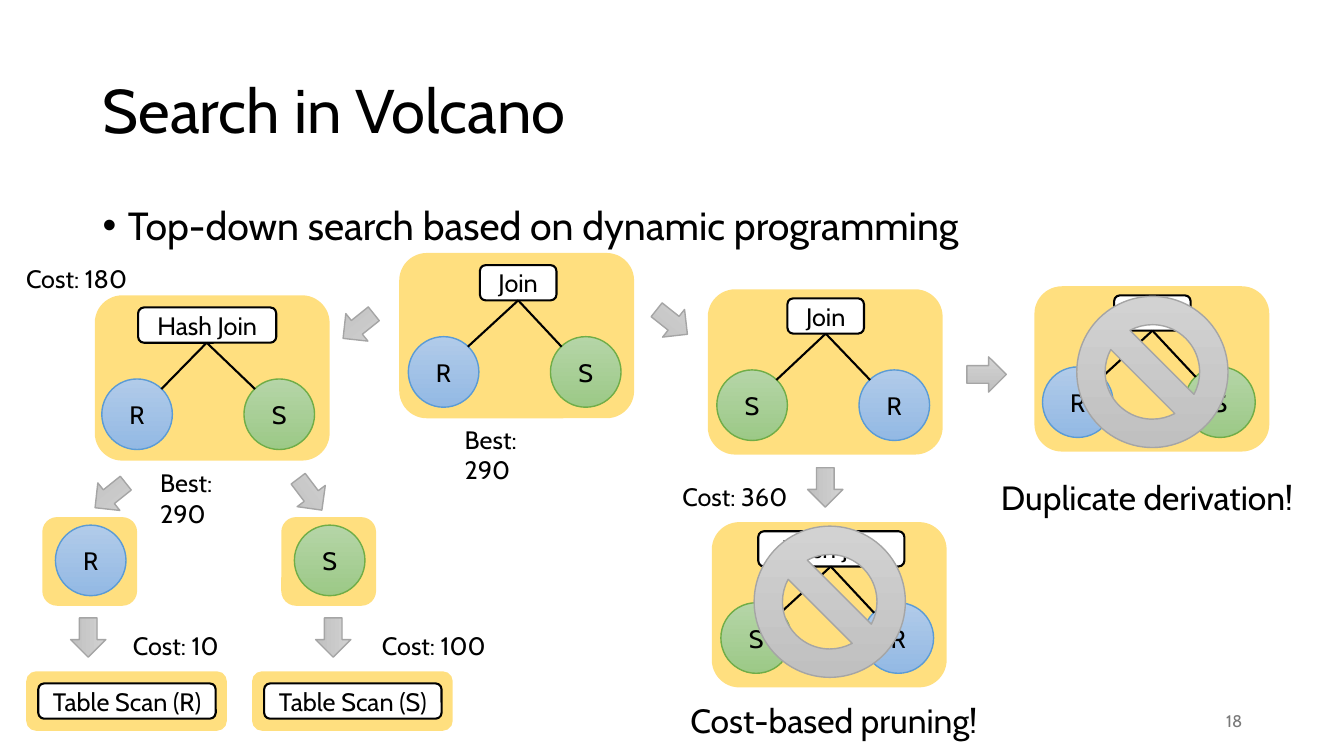
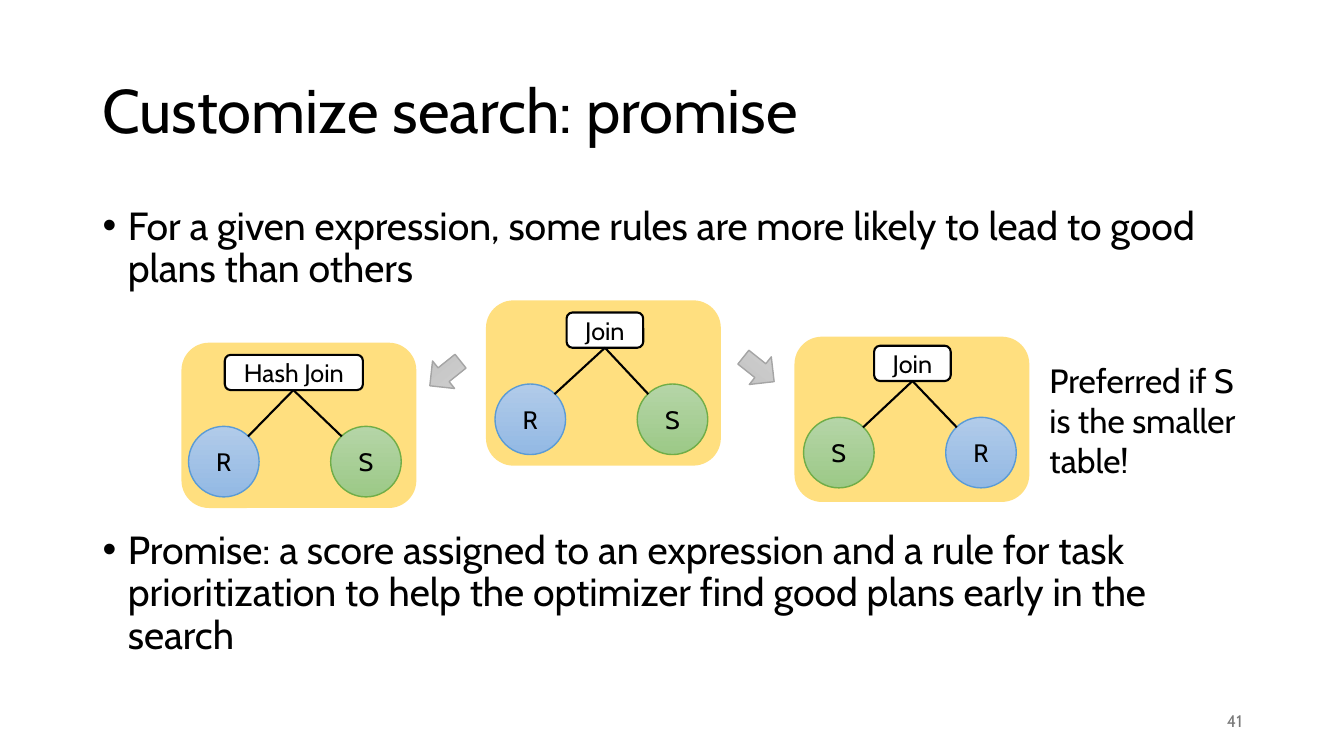
import dataclasses
import typing

import lxml.etree
import pptx
import pptx.dml.color
import pptx.enum.shapes
import pptx.enum.text
import pptx.oxml.ns
import pptx.shapes.autoshape
import pptx.slide
import pptx.util

SCALE = 9144
FACE = "Cabin"
BLACK = "000000"
WHITE = "FFFFFF"
GOLD = "FFC000"
GREY = "797979"
STEEL = ("D2D2D2", "C0C0C0", "A5A5A5")
LEAF = {"R": ("B1CBE9", "93B9E4", "5B9BD5"), "S": ("B5D5A7", "9CC987", "70AD47")}
DISC = 70
SPAN = 141
ROW = 35

KIND = pptx.enum.shapes.MSO_SHAPE
ALIGN = pptx.enum.text.PP_ALIGN
ANCHOR = pptx.enum.text.MSO_ANCHOR
qn = pptx.oxml.ns.qn
Slide = pptx.slide.Slide
Shape = pptx.shapes.autoshape.Shape


@dataclasses.dataclass(frozen=True)
class Box:
    x: int
    y: int
    w: int
    h: int


@dataclasses.dataclass(frozen=True)
class Tree:
    x: int
    y: int
    root: str
    leaves: str
    width: int = 76
    drop: int = 9
    mid: int = 117
    side: int = 9


@dataclasses.dataclass(frozen=True)
class Arrow:
    x: int
    y: int
    turn: float = 0


@dataclasses.dataclass(frozen=True)
class Note:
    x: int
    y: int
    w: int
    text: str
    size: int = 18


@dataclasses.dataclass(frozen=True)
class Scan:
    table: str
    x: int
    pad: int
    arrow: int
    cost: Note


TRIO = [
    Tree(396, 251, "Join", "RS", drop=12, mid=118),
    Tree(702, 287, "Join", "SR"),
    Tree(94, 293, "Hash Join", "RS", width=137, drop=12, mid=111, side=7),
]
TURNS = [Arrow(647, 302, 38.5), Arrow(336, 306, 141.3)]

MORE = [
    Tree(1026, 284, "Join", "RS", side=8),
    Tree(706, 518, "Hash Join", "SR", width=145, mid=118),
]
ARROWS = [
    Arrow(90, 474, 141.3),
    Arrow(288, 473, 52.9),
    Arrow(959, 354),
    Arrow(799, 466, 90),
]
SCANS = [
    Scan("R", 42, 26, 68, Note(122, 620, 111, "Cost: 10")),
    Scan("S", 279, 250, 311, Note(369, 620, 125, "Cost: 100")),
]
NOTES = [
    Note(16, 256, 125, "Cost: 180"),
    Note(667, 473, 125, "Cost: 360"),
    Note(149, 459, 82, "Best: 290"),
    Note(451, 416, 82, "Best: 290"),
    Note(983, 468, 323, "Duplicate derivation!", 24),
    Note(675, 689, 317, "Cost-based pruning!", 24),
]
BANS = [(1068, 294), (748, 522)]


def px(n: int) -> pptx.util.Emu:
    return pptx.util.Emu(n * SCALE)


def rgb(code: str) -> pptx.dml.color.RGBColor:
    return pptx.dml.color.RGBColor.from_string(code)


def put(item: typing.Any, values: dict[str, typing.Any]) -> None:
    for key, value in values.items():
        setattr(item, key, value)


def write(shape: Shape, texts: list[str], size: int, ink: str = BLACK,
          frame: dict | None = None, para: dict | None = None) -> None:
    body = shape.text_frame
    put(body, {"word_wrap": True, **(frame or {})})
    for i, text in enumerate(texts):
        part = body.paragraphs[0] if i == 0 else body.add_paragraph()
        put(part, para or {})
        run = part.add_run()
        run.text = text
        put(run.font, {"name": FACE, "size": pptx.util.Pt(size)})
        run.font.color.rgb = rgb(ink)


def label(slide: Slide, box: Box, texts: list[str], size: int, **form: typing.Any) -> Shape:
    shape = slide.shapes.add_textbox(px(box.x), px(box.y), px(box.w), px(box.h))
    write(shape, texts, size, **form)
    return shape


def solid(slide: Slide, kind: KIND, box: Box, edge: str = "", width: float = 1) -> Shape:
    shape = slide.shapes.add_shape(kind, px(box.x), px(box.y), px(box.w), px(box.h))
    shape.shadow.inherit = False
    if edge:
        shape.line.color.rgb = rgb(edge)
        shape.line.width = pptx.util.Pt(width)
    else:
        shape.line.fill.background()
    return shape


def blend(slide: Slide, kind: KIND, box: Box, tones: tuple[str, str, str]) -> Shape:
    shape = solid(slide, kind, box, tones[2])
    shape.fill.gradient()
    shape.fill.gradient_angle = 270
    for stop, tone in zip(shape.fill.gradient_stops, tones):
        stop.color.rgb = rgb(tone)
    return shape


def center(shape: Shape, text: str) -> None:
    write(shape, [text], 18, frame={"vertical_anchor": ANCHOR.MIDDLE},
          para={"alignment": ALIGN.CENTER})


def pad(slide: Slide, box: Box) -> None:
    shape = solid(slide, KIND.ROUNDED_RECTANGLE, box)
    shape.fill.solid()
    shape.fill.fore_color.rgb = rgb(GOLD)
    tone = shape.fill._xPr.find(".//" + qn("a:srgbClr"))
    lxml.etree.SubElement(tone, qn("a:alpha"), val="50000")


def plate(slide: Slide, x: int, y: int, w: int, text: str) -> None:
    shape = solid(slide, KIND.ROUNDED_RECTANGLE, Box(x, y, w, ROW), BLACK, 1.5)
    shape.fill.solid()
    shape.fill.fore_color.rgb = rgb(WHITE)
    center(shape, text)


def disc(slide: Slide, x: int, y: int, name: str) -> None:
    kind = KIND.FLOWCHART_CONNECTOR
    center(blend(slide, kind, Box(x, y, DISC, DISC), LEAF[name]), name)


def edge(slide: Slide, x: int, y: int, to_x: int, to_y: int) -> None:
    kind = pptx.enum.shapes.MSO_CONNECTOR.STRAIGHT
    line = slide.shapes.add_connector(kind, px(x), px(y), px(to_x), px(to_y))
    line.line.color.rgb = rgb(BLACK)
    line.line.width = pptx.util.Pt(1.5)
    lxml.etree.SubElement(line._element.spPr, qn("a:effectLst"))


def tree(slide: Slide, item: Tree) -> None:
    pad(slide, Box(item.x, item.y, 233, 164))
    mid, top = item.x + item.mid, item.y + item.drop
    plate(slide, mid - item.width // 2, top, item.width, item.root)
    left, low = item.x + item.side, top + 71
    for i, name in enumerate(item.leaves):
        disc(slide, left + i * SPAN, low, name)
    for x in (left + 59, left + SPAN + 11):
        edge(slide, x, low + 10, mid, top + ROW)


def arrow(slide: Slide, item: Arrow) -> None:
    shape = blend(slide, KIND.RIGHT_ARROW, Box(item.x, item.y, 39, ROW), STEEL)
    shape.rotation = item.turn


def note(slide: Slide, item: Note) -> None:
    label(slide, Box(item.x, item.y, item.w, 40), [item.text], item.size)


def scan(slide: Slide, item: Scan) -> None:
    pad(slide, Box(item.x, 513, 94, 88))
    disc(slide, item.x + 13, 521, item.table)
    pad(slide, Box(item.pad, 666, 199, 59))
    plate(slide, item.pad + 12, 678, 176, f"Table Scan ({item.table})")
    arrow(slide, Arrow(item.arrow, 615, 90))
    note(slide, item.cost)


def trio(slide: Slide, dx: int = 0, dy: int = 0) -> None:
    for draw, items in ((tree, TRIO), (arrow, TURNS)):
        for item in items:
            draw(slide, dataclasses.replace(item, x=item.x + dx, y=item.y + dy))


def start(deck: typing.Any, title: str, points: list[str], page: int, gap: int = 10) -> Slide:
    slide = deck.slides.add_slide(deck.slide_layouts[6])
    middle = {"vertical_anchor": ANCHOR.MIDDLE}
    label(slide, Box(92, 40, 1150, 145), [title], 44, frame=middle,
          para={"line_spacing": 0.9})
    body = label(slide, Box(92, 200, 1150, 476), points, 28,
                 para={"line_spacing": 0.9, "space_before": pptx.util.Pt(10)})
    for i, part in enumerate(body.text_frame.paragraphs):
        if i:
            part.space_before = pptx.util.Pt(gap)
        form = part._p.get_or_add_pPr()
        form.set("marL", str(px(25)))
        form.set("indent", str(px(-25)))
        lxml.etree.SubElement(form, qn("a:buFont"), typeface="Arial")
        lxml.etree.SubElement(form, qn("a:buChar"), char="•")
    label(slide, Box(942, 695, 300, 40), [str(page)], 12, ink=GREY, frame=middle,
          para={"alignment": ALIGN.RIGHT})
    return slide


def search(deck: typing.Any) -> None:
    slide = start(deck, "Search in Volcano",
                  ["Top-down search based on dynamic programming"], 18)
    trio(slide)
    for draw, items in ((tree, MORE), (arrow, ARROWS), (scan, SCANS), (note, NOTES)):
        for item in items:
            draw(slide, item)
    for x, y in BANS:
        blend(slide, KIND.NO_SYMBOL, Box(x, y, 150, 150), STEEL)


def promise(deck: typing.Any) -> None:
    points = [
        "For a given expression, some rules are more likely to lead to good plans than others",
        "Promise: a score assigned to an expression and a rule for task prioritization "
        "to help the optimizer find good plans early in the search",
    ]
    slide = start(deck, "Customize search: promise", points, 41, gap=171)
    trio(slide, 86, 47)
    note(slide, Note(1031, 352, 215, "Preferred if S is the smaller table!", 24))


def main() -> None:
    deck = pptx.Presentation()
    put(deck, {"slide_width": px(1333), "slide_height": px(750)})
    search(deck)
    promise(deck)
    deck.save("out.pptx")


if __name__ == "__main__":
    main()
